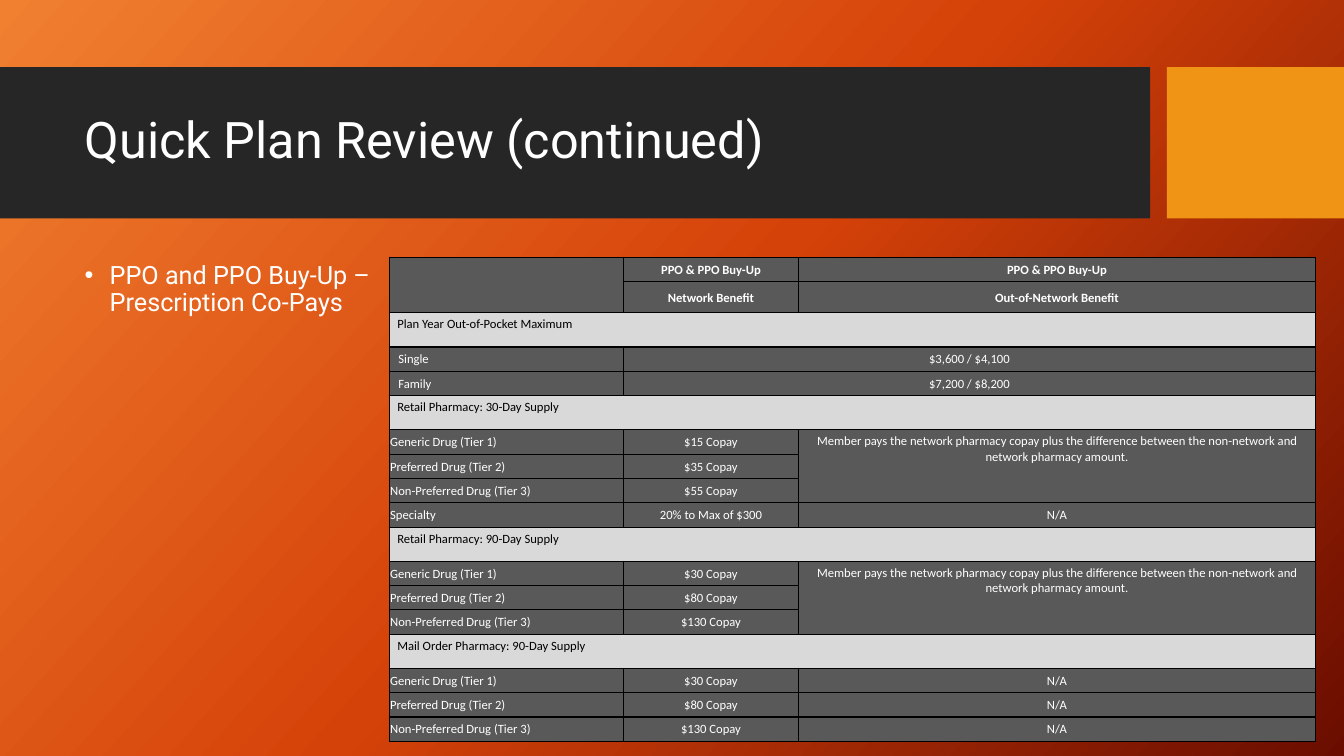
from copy import deepcopy
from dataclasses import dataclass
from enum import Enum
from typing import NamedTuple

from lxml.etree import SubElement
from pptx import Presentation
from pptx.dml.color import RGBColor as RGB
from pptx.enum.shapes import MSO_SHAPE as SHAPE
from pptx.enum.text import MSO_ANCHOR as ANCHOR, MSO_AUTO_SIZE as FIT, PP_ALIGN as ALIGN
from pptx.oxml.ns import qn
from pptx.util import Pt


@dataclass(frozen=True)
class Theme:
    """Colours, fonts and type sizes of the slide."""
    glow: tuple = (("F18031", 0), ("D54209", 0.5), ("6A0D00", 1))
    glow_angle: int = 42
    band: str = "262626"
    accent: str = "F09415"
    cell: str = "595959"
    section: str = "D9D9D9"
    light: str = "FFFFFF"
    dark: str = "000000"
    face: str = "Roboto"
    table_face: str = "Calibri"
    title_size: float = 36
    body_size: float = 18
    table_size: float = 9


class Box(NamedTuple):
    """Left, top, width and height in points."""
    left: float
    top: float
    width: float
    height: float


class Band(NamedTuple):
    """A filled rectangle behind the title."""
    box: Box
    color: str


class Kind(Enum):
    """Role of a table row."""
    HEAD = "head"
    SECTION = "section"
    TOTAL = "total"
    DRUG = "drug"


class Span(Enum):
    """Marks a cell covered by its neighbour."""
    LEFT = "left"
    ABOVE = "above"


class Row(NamedTuple):
    """One table row."""
    kind: Kind
    label: str | Span
    network: str | Span = Span.LEFT
    outside: str | Span = Span.LEFT


T = Theme()
BANDS = (Band(Box(0, 48, 821.5, 108), T.band), Band(Box(833.5, 48, 126.5, 108), T.accent))
TITLE_BOX = Box(53.3, 59, 756.7, 85)
BODY_BOX = Box(53.3, 184.3, 275, 283.7)
TABLE_BOX = Box(278, 183.8, 661.6, 341.2)
COLUMNS = (167.4, 124.9, 369.3)
ROW_HEIGHT, SECTION_HEIGHT = 17.4, 24.4
TIERS = tuple(f"{name} Drug (Tier {i})"
              for i, name in enumerate(("Generic", "Preferred", "Non-Preferred"), 1))
MEMBER = ("Member pays the network pharmacy copay plus the difference between "
          "the non-network and network pharmacy amount.")


def tier_rows(copays: tuple, outside: tuple) -> list[Row]:
    """Return one drug row for each tier."""
    return [Row(Kind.DRUG, tier, f"${pay} Copay", out)
            for tier, pay, out in zip(TIERS, copays, outside)]


SHARED = (MEMBER, Span.ABOVE, Span.ABOVE)
ROWS = [
    Row(Kind.HEAD, "", "PPO & PPO Buy-Up", "PPO & PPO Buy-Up"),
    Row(Kind.HEAD, Span.ABOVE, "Network Benefit", "Out-of-Network Benefit"),
    Row(Kind.SECTION, "Plan Year Out-of-Pocket Maximum"),
    Row(Kind.TOTAL, "Single", "$3,600 / $4,100"),
    Row(Kind.TOTAL, "Family", "$7,200 / $8,200"),
    Row(Kind.SECTION, "Retail Pharmacy: 30-Day Supply"),
    *tier_rows((15, 35, 55), SHARED),
    Row(Kind.DRUG, "Specialty", "20% to Max of $300", "N/A"),
    Row(Kind.SECTION, "Retail Pharmacy: 90-Day Supply"),
    *tier_rows((30, 80, 130), SHARED),
    Row(Kind.SECTION, "Mail Order Pharmacy: 90-Day Supply"),
    *tier_rows((30, 80, 130), ("N/A",) * 3),
]


def points(box: Box) -> tuple:
    """Convert a box to lengths."""
    return tuple(Pt(v) for v in box)


def set_font(p, face: str, size: float, color: str, bold: bool = False) -> None:
    """Format a whole paragraph."""
    f = p.font
    f.name, f.size, f.bold = face, Pt(size), bold
    f.color.rgb = RGB.from_string(color)


def paint_background(s) -> None:
    """Fill the slide with the three-colour gradient."""
    fill = s.background.fill
    fill.gradient()
    fill.gradient_angle = 360 - T.glow_angle
    stops = s.element.find(f".//{qn('a:gsLst')}")
    stops.insert(1, deepcopy(stops[0]))
    for stop, (color, position) in zip(fill.gradient_stops, T.glow):
        stop.color.rgb = RGB.from_string(color)
        stop.position = position


def add_band(s, band: Band) -> None:
    """Draw one plain rectangle."""
    sp = s.shapes.add_shape(SHAPE.RECTANGLE, *points(band.box))
    sp.shadow.inherit = False
    sp.fill.solid()
    sp.fill.fore_color.rgb = RGB.from_string(band.color)
    sp.line.fill.background()


def set_title(s, text: str) -> None:
    """Place the title above the bands."""
    sp = s.shapes.title
    s.shapes.element.append(sp.element)
    sp.left, sp.top, sp.width, sp.height = points(TITLE_BOX)
    tf = sp.text_frame
    tf.text, tf.auto_size, tf.vertical_anchor = text, FIT.NONE, ANCHOR.MIDDLE
    p = tf.paragraphs[0]
    p.alignment, p.line_spacing = ALIGN.LEFT, 0.9
    set_font(p, T.face, T.title_size, T.light)


def add_bullet(s, text: str) -> None:
    """Add the bulleted plan name."""
    tf = s.shapes.add_textbox(*points(BODY_BOX)).text_frame
    tf.word_wrap, tf.text = True, text
    p = tf.paragraphs[0]
    p.line_spacing = 0.9
    pr = p._p.get_or_add_pPr()
    pr.set("marL", str(Pt(18)))
    pr.set("indent", str(-Pt(18)))
    SubElement(pr, qn("a:buFont"), typeface="Arial")
    SubElement(pr, qn("a:buChar"), char="•")
    set_font(p, T.face, T.body_size, T.light)


def style_cell(cell, kind: Kind, col: int, value: str | Span) -> None:
    """Set borders, fill, margins and text of a cell."""
    tc_pr = cell._tc.get_or_add_tcPr()
    for side in "LRTB":
        ln = SubElement(tc_pr, qn(f"a:ln{side}"), w=str(Pt(1)))
        SubElement(SubElement(ln, qn("a:solidFill")), qn("a:srgbClr"), val=T.dark)
    section = kind is Kind.SECTION
    cell.fill.solid()
    cell.fill.fore_color.rgb = RGB.from_string(T.section if section else T.cell)
    roomy = section or value == MEMBER
    margins = (5.8, 2.9, 5.8, 2.9) if roomy else (0.7, 0.7, 0.7, 0)
    cell.margin_left, cell.margin_top, cell.margin_right, cell.margin_bottom = map(Pt, margins)
    if kind is Kind.TOTAL and col == 0:
        cell.margin_left = Pt(6.6)
    cell.vertical_anchor = ANCHOR.TOP if roomy else ANCHOR.MIDDLE
    if isinstance(value, str) and value:
        cell.text = value
        p = cell.text_frame.paragraphs[0]
        p.alignment = ALIGN.CENTER if col else ALIGN.JUSTIFY
        set_font(p, T.table_face, T.table_size, T.dark if section else T.light, kind is Kind.HEAD)


def add_copays(s) -> None:
    """Build the co-pay table and merge its covered cells."""
    table = s.shapes.add_table(len(ROWS), len(COLUMNS), *points(TABLE_BOX)).table
    table.first_row = table.horz_banding = False
    for column, width in zip(table.columns, COLUMNS):
        column.width = Pt(width)
    grid = [row[1:] for row in ROWS]
    for i, row in enumerate(ROWS):
        table.rows[i].height = Pt(SECTION_HEIGHT if row.kind is Kind.SECTION else ROW_HEIGHT)
        for j, value in enumerate(grid[i]):
            style_cell(table.cell(i, j), row.kind, j, value)
    for i, values in enumerate(grid):
        for j, value in enumerate(values):
            bottom, right = i, j
            while bottom + 1 < len(grid) and grid[bottom + 1][j] is Span.ABOVE:
                bottom += 1
            while right + 1 < len(values) and values[right + 1] is Span.LEFT:
                right += 1
            if isinstance(value, str) and (bottom, right) != (i, j):
                table.cell(i, j).merge(table.cell(bottom, right))


def main() -> None:
    """Build and save the slide."""
    prs = Presentation()
    prs.slide_width, prs.slide_height = Pt(960), Pt(540)
    s = prs.slides.add_slide(prs.slide_layouts[5])
    paint_background(s)
    for band in BANDS:
        add_band(s, band)
    set_title(s, "Quick Plan Review (continued)")
    add_bullet(s, "PPO and PPO Buy-Up – Prescription Co-Pays")
    add_copays(s)
    prs.save("out.pptx")


if __name__ == "__main__":
    main()
